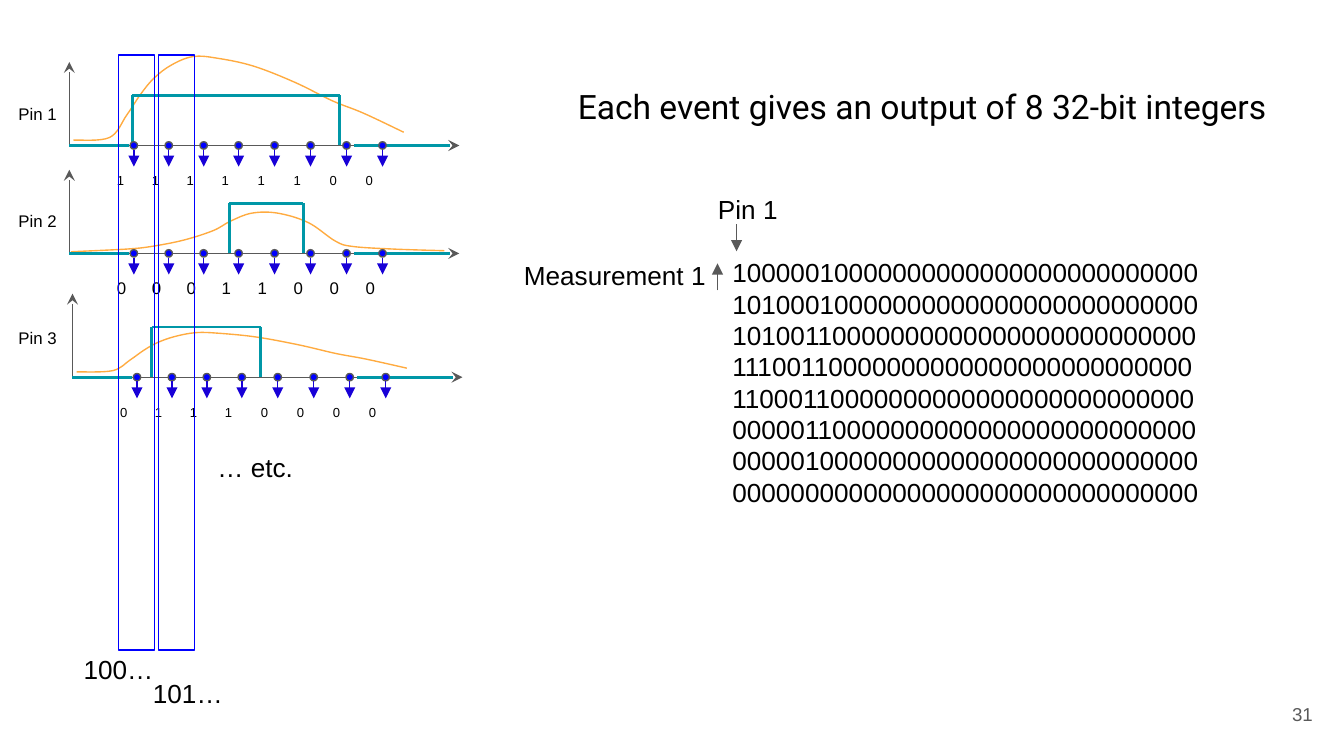
from pptx import Presentation
from pptx.dml.color import RGBColor
from pptx.enum.shapes import MSO_CONNECTOR, MSO_SHAPE
from pptx.enum.text import MSO_ANCHOR, PP_ALIGN
from pptx.oxml.ns import qn
from pptx.util import Cm, Pt
from lxml import etree

LINE = MSO_CONNECTOR.STRAIGHT
RECT, OVAL = MSO_SHAPE.RECTANGLE, MSO_SHAPE.OVAL
TOP, MIDDLE = MSO_ANCHOR.TOP, MSO_ANCHOR.MIDDLE
LEFT, RIGHT = PP_ALIGN.LEFT, PP_ALIGN.RIGHT

COLORS = {"text": "000000", "gray": "595959", "wave": "FFAB40",
          "pulse": "0097A7", "blue": "0000FF", "arrow": "1800D7"}

# Content, all lengths in cm; wave knots are (right of origin, above axis)
TALL = [(0.08, 0.1), (0.76, 0.15), (1.09, 0.58), (1.35, 0.97), (1.6, 1.27),
        (1.93, 1.52), (2.34, 1.68), (2.79, 1.65), (3.48, 1.5), (4.27, 1.19),
        (4.98, 0.84), (5.56, 0.61), (6.32, 0.25)]
LATE = [(0.03, 0.03), (1.07, 0.08), (1.55, 0.13), (2.16, 0.25), (2.72, 0.43),
        (3.05, 0.61), (3.45, 0.76), (3.94, 0.76), (4.52, 0.58), (5.03, 0.23),
        (5.36, 0.13), (6.15, 0.08), (7.09, 0.05)]
LOW = [(x, 0.1 + (y - 0.1) * 0.47) for x, y in TALL]

PINS = [
    {"name": "Pin 1", "x": 1.31, "y": 2.75, "label": 1.73, "wave": TALL,
     "pulse": (1.19, 5.11), "bits": "11111100", "size": 7, "drop": 0.3},
    {"name": "Pin 2", "x": 1.31, "y": 4.79, "label": 3.77, "wave": LATE,
     "pulse": (3.02, 4.42), "bits": "00011000", "size": 9, "drop": 0.23},
    {"name": "Pin 3", "x": 1.37, "y": 7.13, "label": 5.98, "wave": LOW,
     "pulse": (1.5, 3.56), "bits": "01110000", "size": 7, "drop": 0.31},
]
TICKS = [1.22, 1.88, 2.54, 3.2, 3.88, 4.56, 5.24, 5.92]
ROWS = ["10000010000000000000000000000000",
        "10100010000000000000000000000000",
        "10100110000000000000000000000000",
        "11100110000000000000000000000000",
        "11000110000000000000000000000000",
        "00000110000000000000000000000000",
        "00000100000000000000000000000000",
        "00000000000000000000000000000000"]
# Lines of text, (left, top, width, height), size, font
NOTES = [
    (["… etc."], (3.86, 8.28, 4.42, 2.03), 14, "Arial"),
    (["100…"], (1.33, 12.1, 2.11, 0.97), 14, "Arial"),
    (["101…"], (2.64, 12.55, 2.11, 0.97), 14, "Arial"),
    (["Each event gives an output of 8 32-bit integers"],
     (10.67, 1.37, 13.61, 1.27), 18, "Roboto"),
    (ROWS, (13.59, 4.6, 12.14, 5.31), 14, "Arial"),
    (["Pin 1"], (13.32, 3.43, 3.4, 0.48), 14, "Arial"),
    (["Measurement 1"], (9.65, 4.68, 4.27, 0.48), 14, "Arial"),
]
POINTERS = [((13.92, 4.24), (13.92, 4.75)), ((13.56, 5.49), (13.56, 4.98))]
WINDOWS = [2.24, 3.0]
AXIS_W, AXIS_H, PULSE_H, DOT = 7.37, 1.58, 0.95, 0.14
INSET = 0.25

deck = Presentation()
deck.slide_width, deck.slide_height = Cm(25.4), Cm(14.29)
shapes = deck.slides.add_slide(deck.slide_layouts[6]).shapes


def rgb(name):
    return RGBColor.from_string(COLORS[name])


def line(start, end, color, width=0.75, tip=None, side="tail"):
    link = shapes.add_connector(LINE, *map(Cm, start + end))
    link.line.color.rgb = rgb(color)
    link.line.width = Pt(width)
    props = link._element.spPr
    if tip:
        etree.SubElement(props.find(qn("a:ln")), qn(f"a:{side}End"), type=tip)
    etree.SubElement(props, qn("a:effectLst"))


def style(shape, color, fill=None):
    shape.shadow.inherit = False
    shape.line.color.rgb = rgb(color)
    shape.line.width = Pt(0.75)
    if fill:
        shape.fill.solid()
        shape.fill.fore_color.rgb = rgb(fill)
    else:
        shape.fill.background()


def text(lines, box, size, font="Arial", color="text", align=LEFT,
         anchor=TOP, inset=INSET):
    frame = shapes.add_textbox(*map(Cm, box)).text_frame
    frame.word_wrap = True
    frame.vertical_anchor = anchor
    frame.margin_left = frame.margin_right = frame.margin_bottom = Cm(INSET)
    frame.margin_top = Cm(inset)
    frame.text = "\n".join(lines)
    for para in frame.paragraphs:
        para.alignment = align
        para.font.size = Pt(size)
        para.font.name = font
        para.font.color.rgb = rgb(color)


def small(word, box, size):
    """Text whose first line sits as low as that of 11 point text."""
    text([word], box, size, inset=INSET + (11 - size) * 0.03)


def curve(knots):
    """A freeform with a smooth Bezier segment between each two knots."""
    pen = shapes.build_freeform(*knots[0])
    pen.add_line_segments(knots[1:], close=False)
    shape = pen.convert_to_shape()
    route = next(shape._element.iter(qn("a:path")))
    spots = [(int(p.get("x")), int(p.get("y"))) for p in route.iter(qn("a:pt"))]
    ends = [spots[0], *spots, spots[-1]]
    for old in route.findall(qn("a:lnTo")):
        route.remove(old)
    for a, b, c, d in zip(ends, ends[1:], ends[2:], ends[3:]):
        bend = etree.SubElement(route, qn("a:cubicBezTo"))
        leave = [q + (r - p) / 6 for p, q, r in zip(a, b, c)]
        reach = [q - (r - p) / 6 for p, q, r in zip(b, c, d)]
        for x, y in (leave, reach, c):
            etree.SubElement(bend, qn("a:pt"), x=str(round(x)), y=str(round(y)))
    return shape


def plot(pin):
    x, y = pin["x"], pin["y"]

    # Axes
    line((x, y - AXIS_H), (x, y), "gray", tip="stealth", side="head")
    line((x, y), (x + AXIS_W, y), "gray", tip="stealth")

    # Analog wave
    style(curve([(Cm(x + dx), Cm(y - up)) for dx, up in pin["wave"]]), "wave")

    # Digital pulse
    rise, fall = (x + dx for dx in pin["pulse"])
    top = y - PULSE_H
    for start, end in [((x, y), (x + 1.12, y)), ((rise, y), (rise, top)),
                       ((rise, top), (fall, top)), ((fall, top), (fall, y)),
                       ((x + 5.38, y), (x + 7.19, y))]:
        line(start, end, "pulse", 1.5)

    # Samples and their bits
    for tick, bit in zip(TICKS, pin["bits"]):
        mid = x + tick
        dot = shapes.add_shape(OVAL, Cm(mid - DOT / 2), Cm(y - DOT / 2),
                               Cm(DOT), Cm(DOT))
        style(dot, "gray", "blue")
        line((mid, y + 0.08), (mid, y + 0.4), "arrow", tip="triangle")
        small(bit, (mid - 0.35, y + pin["drop"], 0.28, 0.48), pin["size"])

    small(pin["name"], (0.1, pin["label"], 1.8, 1.09), 9)


for pin in PINS:
    plot(pin)

# Sampling windows
for left in WINDOWS:
    style(shapes.add_shape(RECT, Cm(left), Cm(1.04), Cm(0.68), Cm(11.25)), "blue")

# Texts and pointers
for note in NOTES:
    text(*note)
for start, end in POINTERS:
    line(start, end, "gray", tip="triangle")
text(["31"], (23.54, 12.95, 1.52, 1.09), 10, color="gray", align=RIGHT, anchor=MIDDLE)

deck.save("out.pptx")
